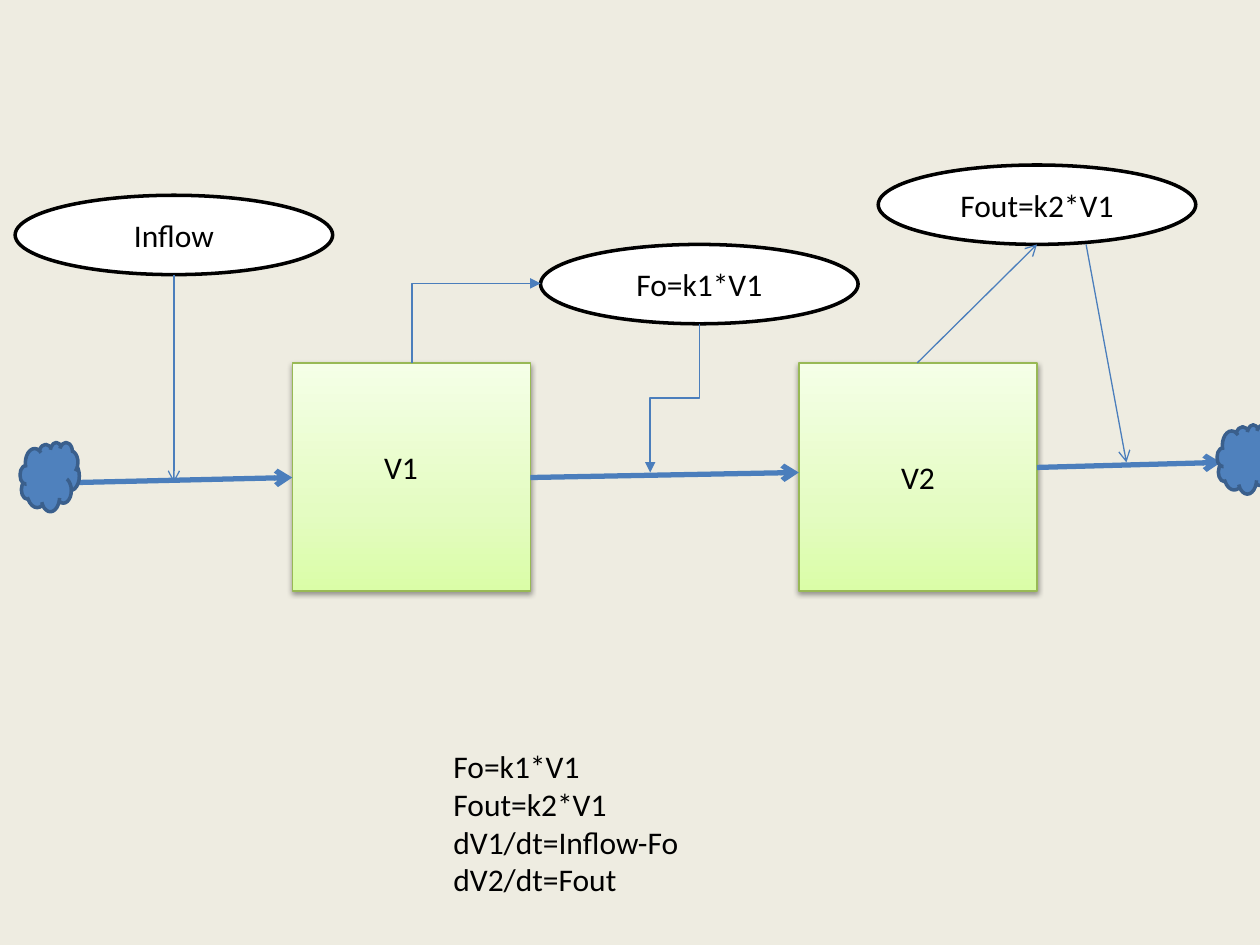
from dataclasses import dataclass

from lxml import etree
from pptx import Presentation
from pptx.dml.color import RGBColor
from pptx.enum.shapes import MSO_CONNECTOR, MSO_SHAPE
from pptx.enum.text import MSO_ANCHOR, MSO_AUTO_SIZE, PP_ALIGN
from pptx.oxml.ns import qn
from pptx.util import Inches, Pt

RECT, OVAL, CLOUD = MSO_SHAPE.RECTANGLE, MSO_SHAPE.OVAL, MSO_SHAPE.CLOUD
STRAIGHT, ELBOW = MSO_CONNECTOR.STRAIGHT, MSO_CONNECTOR.ELBOW
MIDDLE, CENTER, LEFT = MSO_ANCHOR.MIDDLE, PP_ALIGN.CENTER, PP_ALIGN.LEFT
GROW = MSO_AUTO_SIZE.SHAPE_TO_FIT_TEXT


@dataclass(frozen=True)
class Theme:
    font: str = "Calibri"
    size: float = 18
    text: str = "000000"
    background: str = "EEECE1"
    oval: str = "FFFFFF"
    outline: str = "000000"
    cloud: str = "4F81BD"
    cloud_line: str = "3A5F8C"
    arrow: str = "4B7EBC"
    stock_line: str = "98B955"
    stock_stops: tuple = ((0, "DAFDA7"), (35, "E4FCC2"), (100, "F5FFE7"))
    shadow: str = "000000"
    thin: float = 0.75
    medium: float = 2
    thick: float = 3


def set_all(target, values):
    for name, value in values.items():
        setattr(target, name, value)


def add_color(parent, color):
    return etree.SubElement(parent, qn("a:srgbClr"), val=color)


class Diagram:
    def __init__(self, slide, theme):
        self.s, self.theme = slide, theme
        self.solid(slide.background, theme.background)

    def line(self, sp, color, width):
        sp.line.color.rgb = RGBColor.from_string(color)
        sp.line.width = Pt(width)

    def solid(self, sp, color):
        fill = sp.fill
        fill.solid()
        fill.fore_color.rgb = RGBColor.from_string(color)

    def add_lines(self, tf, lines, align):
        t = self.theme
        style = {"name": t.font, "size": Pt(t.size)}
        for i, text in enumerate(lines):
            p = tf.add_paragraph() if i else tf.paragraphs[0]
            p.alignment = align
            r = p.add_run()
            r.text = text
            set_all(r.font, style)
            r.font.color.rgb = RGBColor.from_string(t.text)

    def shape(self, kind, box, color, width, label=None):
        sp = self.s.shapes.add_shape(kind, *map(Inches, box))
        self.line(sp, color, width)
        sp.shadow.inherit = False
        if label:
            sp.text_frame.vertical_anchor = MIDDLE
            self.add_lines(sp.text_frame, [label], CENTER)
        return sp

    def oval(self, x, y, label):
        t = self.theme
        sp = self.shape(OVAL, (x, y, 2.52, 0.63), t.outline, t.medium, label)
        self.solid(sp, t.oval)

    def cloud(self, x, y):
        t = self.theme
        sp = self.shape(CLOUD, (x, y, 0.47, 0.55), t.cloud_line, t.medium)
        self.solid(sp, t.cloud)

    def stock(self, x, y, label=None):
        t = self.theme
        sp = self.shape(RECT, (x, y, 1.89, 1.81), t.stock_line, t.thin, label)
        sp.fill.gradient()
        sp.fill.gradient_angle = 90
        props = sp._element.spPr
        stops = props.find(".//" + qn("a:gsLst"))
        for old in list(stops):
            stops.remove(old)
        for position, color in t.stock_stops:
            add_color(etree.SubElement(stops, qn("a:gs"), pos=str(position * 1000)), color)
        shadow = etree.SubElement(
            props.find(qn("a:effectLst")), qn("a:outerShdw"), blurRad=str(Pt(3.1)),
            dist=str(Pt(1.6)), dir="5400000", rotWithShape="0")
        etree.SubElement(add_color(shadow, t.shadow), qn("a:alpha"), val="38000")

    def text(self, box, lines):
        tf = self.s.shapes.add_textbox(*map(Inches, box)).text_frame
        set_all(tf, {"word_wrap": False, "auto_size": GROW})
        self.add_lines(tf, lines, LEFT)

    def arrow(self, start, end, width=None, kind=STRAIGHT, head="arrow"):
        t = self.theme
        c = self.s.shapes.add_connector(kind, *map(Inches, (*start, *end)))
        self.line(c, t.arrow, width or t.thin)
        props = c._element.spPr
        etree.SubElement(props.find(qn("a:ln")), qn("a:tailEnd"), type=head)
        etree.SubElement(props, qn("a:effectLst"))
        return props

    def bent_arrow(self, start, end, preset):
        cx, cy = ((a + b) / 2 for a, b in zip(start, end))
        turned = [(cx + y - cy, cy - x + cx) for x, y in (start, end)]
        props = self.arrow(*turned, kind=ELBOW, head="triangle")
        props.find(qn("a:xfrm")).set("rot", "5400000")
        props.find(qn("a:prstGeom")).set("prst", preset)


def main():
    prs = Presentation()
    set_all(prs, {"slide_width": Inches(10), "slide_height": Inches(7.5)})
    theme = Theme()
    d = Diagram(prs.slides.add_slide(prs.slide_layouts[6]), theme)

    d.stock(2.32, 2.88)
    d.text((2.95, 3.51, 0.47, 0.4), ["V1"])
    d.stock(6.34, 2.88, "V2")

    for x, y, label in ((4.29, 1.94, "Fo=k1*V1"), (0.12, 1.55, "Inflow"),
                        (6.97, 1.31, "Fout=k2*V1")):
        d.oval(x, y, label)

    for start, end in (((0.59, 3.83), (2.32, 3.79)), ((4.21, 3.79), (6.34, 3.75)),
                       ((8.23, 3.71), (9.69, 3.67))):
        d.arrow(start, end, theme.thick)

    for start, end in (((1.38, 2.18), (1.38, 3.83)), ((8.62, 1.94), (8.94, 3.67)),
                       ((7.28, 2.88), (8.23, 1.94))):
        d.arrow(start, end)

    d.bent_arrow((3.27, 2.88), (4.29, 2.25), "bentConnector2")
    d.bent_arrow((5.55, 2.57), (5.16, 3.75), "bentConnector3")

    d.text((3.5, 5.88, 2.01, 1.62),
           ["Fo=k1*V1", "Fout=k2*V1", "dV1/dt=Inflow-Fo", "dV2/dt=Fout"])

    for x, y in ((0.16, 3.51), (9.66, 3.37)):
        d.cloud(x, y)

    prs.save("out.pptx")


if __name__ == "__main__":
    main()
